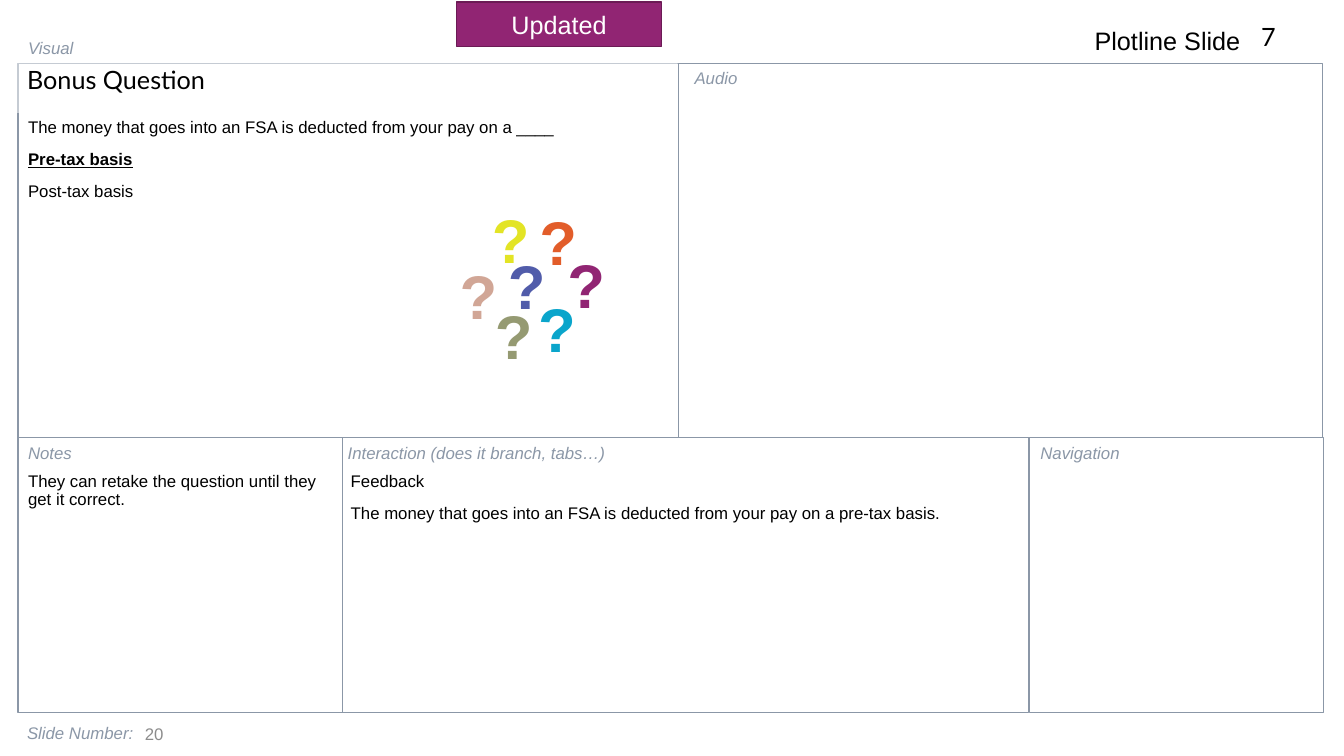
from dataclasses import dataclass

from lxml import etree
from pptx import Presentation
from pptx import util as u
from pptx.dml.color import RGBColor
from pptx.enum import shapes, text
from pptx.oxml.ns import qn

PX = 9144  # EMU per px, 100 px to the inch


@dataclass(frozen=True)
class Theme:
    sans: str = "Arial"
    head: str = "Lato"
    small: int = 12
    large: int = 18
    huge: int = 44
    ink: str = "000000"
    paper: str = "FFFFFF"
    slate: str = "8B97A7"
    gray: str = "8C8C8C"
    plum: str = "912573"
    edge: str = "6B1B55"


T = Theme()


@dataclass(frozen=True)
class Box:
    left: int
    top: int
    width: int
    height: int

    def emu(self) -> tuple[int, ...]:
        return tuple(n * PX for n in (self.left, self.top, self.width, self.height))


@dataclass(frozen=True)
class Style:
    size: int = T.small
    color: str = T.ink
    font: str = T.sans
    bold: bool = False
    italic: bool = False
    align: text.PP_ALIGN = text.PP_ALIGN.LEFT
    middle: bool = False
    body: bool = False
    grow: bool = False


@dataclass(frozen=True)
class Label:
    box: Box
    words: str
    style: Style


@dataclass(frozen=True)
class Mark:
    left: int
    top: int
    color: str


HINT = Style(color=T.slate, italic=True, grow=True)
FOOT = Style(color=T.slate, italic=True, middle=True)
COUNT = Style(color=T.gray, align=text.PP_ALIGN.RIGHT, middle=True)
RIGHT = Style(size=T.large, align=text.PP_ALIGN.RIGHT, grow=True)
BODY = Style(body=True)
TITLE = Style(size=T.large, font=T.head, body=True)
BADGE = Style(size=T.large, color=T.paper, align=text.PP_ALIGN.CENTER, middle=True)

ANSWER = "Pre-tax basis"

PANELS = [
    Box(18, 63, 655, 371),
    Box(673, 63, 639, 371),
    Box(18, 434, 322, 273),
    Box(340, 434, 680, 273),
    Box(1021, 434, 292, 273),
]

LABELS = [
    Label(Box(18, 33, 154, 30), "Visual", HINT),
    Label(Box(679, 62, 154, 30), "Audio", HINT),
    Label(Box(18, 434, 154, 30), "Notes", HINT),
    Label(Box(335, 434, 449, 30), "Interaction (does it branch, tabs…)", HINT),
    Label(Box(1022, 434, 139, 30), "Navigation", HINT),
    Label(Box(17, 707, 300, 40), "Slide Number:", FOOT),
    Label(Box(1054, 20, 186, 40), "Plotline Slide", RIGHT),
]

TITLES = [
    Label(Box(17, 62, 655, 50), "Bonus Question", TITLE),
    Label(Box(1241, 20, 71, 41), "7", TITLE),
]

BODIES = [
    Label(
        Box(18, 113, 655, 321),
        "The money that goes into an FSA is deducted from your pay on a ____\n"
        f"{ANSWER}\nPost-tax basis",
        BODY,
    ),
    Label(Box(18, 464, 321, 243),
          "They can retake the question until they get it correct.", BODY),
    Label(
        Box(338, 464, 682, 243),
        "Feedback\n"
        "The money that goes into an FSA is deducted from your pay on a pre-tax basis.",
        BODY,
    ),
    Label(Box(-128, 708, 300, 40), "20", COUNT),
]

MARKS = [
    Mark(552, 240, T.plum),
    Mark(493, 241, "515CAA"),
    Mark(445, 251, "D1A696"),
    Mark(524, 197, "E25D2A"),
    Mark(523, 284, "0AA5CB"),
    Mark(477, 195, "E3E425"),
    Mark(480, 291, "959A72"),
]


def rect(slide, box: Box, fill: str = "", line: str = "", alpha: int = 100):
    """Draw a rectangle; an empty colour means none, alpha is in percent."""
    shape = slide.shapes.add_shape(shapes.MSO_SHAPE.RECTANGLE, *box.emu())
    shape.shadow.inherit = False
    if fill:
        shape.fill.solid()
        shape.fill.fore_color.rgb = RGBColor.from_string(fill)
        if alpha < 100:
            tone = shape.fill._xPr.find(".//" + qn("a:srgbClr"))
            etree.SubElement(tone, qn("a:alpha"), val=str(alpha * 1000))
    else:
        shape.fill.background()
    if line:
        shape.line.color.rgb = RGBColor.from_string(line)
        shape.line.width = u.Pt(1)
    else:
        shape.line.fill.background()
    return shape


def write(shape, words: str, style: Style) -> None:
    frame = shape.text_frame
    frame.text = words
    frame.word_wrap = True
    frame.vertical_anchor = (
        text.MSO_ANCHOR.MIDDLE if style.middle else text.MSO_ANCHOR.TOP
    )
    if style.grow:
        frame.auto_size = text.MSO_AUTO_SIZE.SHAPE_TO_FIT_TEXT
    for para in frame.paragraphs:
        para.alignment = style.align
        if style.body:
            para.line_spacing = 0.9
            para.space_before = u.Pt(10)
        for run in para.runs:
            font = run.font
            font.name = style.font
            font.size = u.Pt(style.size)
            font.color.rgb = RGBColor.from_string(style.color)
            font.italic = style.italic
            font.bold = style.bold or run.text == ANSWER
            font.underline = run.text == ANSWER


def place(slide, label: Label) -> None:
    write(slide.shapes.add_textbox(*label.box.emu()), label.words, label.style)


def main() -> None:
    deck = Presentation()
    deck.slide_width, deck.slide_height = 1333 * PX, 750 * PX
    slide = deck.slides.add_slide(deck.slide_layouts[6])
    for panel in PANELS:
        rect(slide, panel, line=T.slate)
    for label in LABELS:
        place(slide, label)
    for title in TITLES:
        write(rect(slide, title.box, T.paper, alpha=50), title.words, title.style)
    for label in BODIES:
        place(slide, label)
    for mark in MARKS:
        style = Style(T.huge, mark.color, bold=True,
                      align=text.PP_ALIGN.CENTER, grow=True)
        place(slide, Label(Box(mark.left, mark.top, 59, 84), "?", style))
    write(rect(slide, Box(453, 2, 203, 44), T.plum, T.edge), "Updated", BADGE)
    deck.save("out.pptx")


if __name__ == "__main__":
    main()
